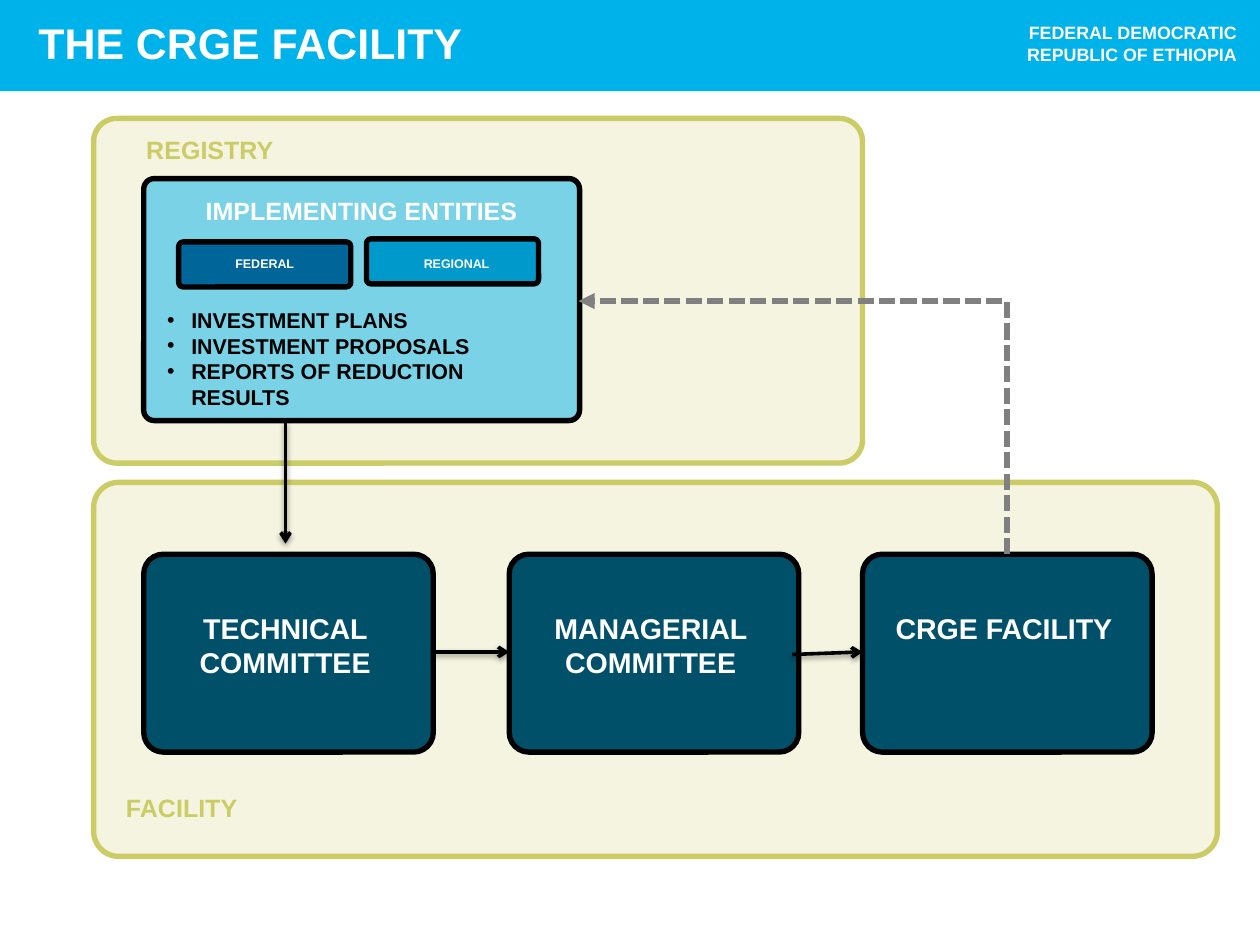
import pptx
import pptx.util
import pptx.dml.color
import pptx.enum.shapes
import pptx.enum.text
import pptx.enum.dml
import pptx.oxml
import pptx.oxml.ns

Cm, Pt = pptx.util.Cm, pptx.util.Pt
SHAPE = pptx.enum.shapes.MSO_SHAPE
CONNECTOR = pptx.enum.shapes.MSO_CONNECTOR
ALIGN = pptx.enum.text.PP_ALIGN
ANCHOR = pptx.enum.text.MSO_ANCHOR

# Content: all places and sizes in centimetres
SKY, OLIVE, NAVY, WHITE, BLACK, GREY = "00B2EA", "CCCC66", "00506A", "FFFFFF", "000000", "808080"
TITLE = "THE CRGE FACILITY"
COUNTRY = "FEDERAL DEMOCRATIC\vREPUBLIC OF ETHIOPIA"
# box, label, label place
PANELS = [
    ((1.85, 2.34, 15.19, 6.81), "REGISTRY", (2.64, 2.54)),
    ((1.85, 9.53, 22.2, 7.39), "FACILITY", (2.24, 15.54)),
]
COMMITTEES = [
    (2.84, "TECHNICAL COMMITTEE"),
    (10.06, "MANAGERIAL COMMITTEE"),
    (17.04, "CRGE FACILITY"),
]
ENTITIES_BOX = (2.84, 3.53, 8.61, 4.78)
ENTITIES_TITLE = "IMPLEMENTING ENTITIES"
# name, colour, box left and top, label left
LEVELS = [
    ("FEDERAL", "006699", 3.53, 4.78, 3.45),
    ("REGIONAL", "0099CC", 7.24, 4.72, 7.24),
]
DOCUMENTS = ["INVESTMENT PLANS", "INVESTMENT PROPOSALS", "REPORTS OF REDUCTION RESULTS"]
FLOW_ARROWS = [
    (8.56, 12.88, 10.06, 12.88),
    (15.65, 12.93, 17.04, 12.88),
    (5.64, 8.33, 5.64, 10.74),
]

presentation = pptx.Presentation()
presentation.slide_width, presentation.slide_height = Cm(24.89), Cm(18.67)
slide = presentation.slides.add_slide(presentation.slide_layouts[6])


def paint(color_format, color):
    color_format.rgb = pptx.dml.color.RGBColor.from_string(color)


def add_xml(parent, xml):
    """Append one element of the drawing namespace, given as a string."""
    declared = xml.replace(" ", " " + pptx.oxml.ns.nsdecls("a") + " ", 1)
    parent.append(pptx.oxml.parse_xml(declared))


def add_box(box, fill, line=None, corner=None, opacity=100):
    kind = SHAPE.RECTANGLE if corner is None else SHAPE.ROUNDED_RECTANGLE
    shape = slide.shapes.add_shape(kind, *map(Cm, box))
    shape.shadow.inherit = False
    if corner is not None:
        shape.adjustments[0] = corner
    shape.fill.solid()
    paint(shape.fill.fore_color, fill)
    if opacity < 100:
        color = shape.fill._xPr.find(".//" + pptx.oxml.ns.qn("a:srgbClr"))
        add_xml(color, f'<a:alpha val="{opacity * 1000}"/>')
    if line:
        paint(shape.line.color, line)
        shape.line.width = Pt(3)
    else:
        shape.line.fill.background()


def add_text(text, box, size, color=WHITE, align=ALIGN.LEFT, anchor=ANCHOR.TOP,
             margins=True, bullets=False):
    frame = slide.shapes.add_textbox(*map(Cm, box)).text_frame
    frame.word_wrap = True
    frame.vertical_anchor = anchor
    if not margins:
        frame.margin_left = frame.margin_right = frame.margin_top = frame.margin_bottom = 0
    frame.text = text
    for paragraph in frame.paragraphs:
        paragraph.alignment = align
        font = paragraph.font
        for run in paragraph.runs:
            font = run.font
            font.name, font.size, font.bold = "Arial", Pt(size), True
            paint(font.color, color)
        if bullets:
            properties = paragraph._p.get_or_add_pPr()
            properties.set("marL", str(Cm(0.48)))
            properties.set("indent", str(-Cm(0.48)))
            add_xml(properties, '<a:buFont typeface="Arial"/>')
            add_xml(properties, '<a:buChar char="•"/>')


def add_arrow(kind, ends, color, width, head, dash=None, shadow=False):
    connector = slide.shapes.add_connector(kind, *map(Cm, ends))
    paint(connector.line.color, color)
    connector.line.width = Pt(width)
    if dash:
        connector.line.dash_style = dash
    add_xml(connector.line._get_or_add_ln(), f'<a:tailEnd type="{head}"/>')
    effect = ""
    if shadow:
        effect = (f'<a:outerShdw blurRad="{Pt(3.1)}" dist="{Pt(1.6)}" dir="5400000" rotWithShape="0">'
                  f'<a:srgbClr val="{BLACK}"><a:alpha val="38000"/></a:srgbClr></a:outerShdw>')
    add_xml(connector._element.spPr, f"<a:effectLst >{effect}</a:effectLst>")
    return connector


# Header band
add_box((0, 0, 24.89, 1.8), SKY)
add_text(TITLE, (0.76, 0.33, 19.89, 1.02), 24, anchor=ANCHOR.BOTTOM, margins=False)
add_text(COUNTRY, (18.64, 0.43, 5.79, 1.27), 10, align=ALIGN.RIGHT, margins=False)

# Registry and facility panels
for box, label, place in PANELS:
    add_box(box, OLIVE, line=OLIVE, corner=0.067, opacity=20)
    add_text(label, (*place, 6.81, 0.86), 14, color=OLIVE)

# Committees
for left, name in COMMITTEES:
    add_box((left, 10.95, 5.72, 3.91), NAVY, line=BLACK, corner=0.099)
    add_text(name, (left, 11.94, 5.59, 1.63), 16, align=ALIGN.CENTER)

# Implementing entities
add_box(ENTITIES_BOX, SKY, line=BLACK, corner=0.043, opacity=50)
add_text(ENTITIES_TITLE, (2.84, 3.73, 8.61, 0.86), 14, align=ALIGN.CENTER)
for name, color, left, top, label_left in LEVELS:
    add_box((left, top, 3.4, 0.89), color, line=BLACK, corner=0.099)
    add_text(name, (label_left, 4.93, 3.56, 0.56), 7, align=ALIGN.CENTER)
add_text("\n".join(DOCUMENTS), (3.05, 5.94, 6.81, 2.31), 12, color=BLACK, bullets=True)

# Flow arrows
for ends in FLOW_ARROWS:
    add_arrow(CONNECTOR.STRAIGHT, ends, BLACK, 2, "arrow", shadow=True)

# Dashed feedback arrow: one bend, turned by 270 degrees
feedback = add_arrow(CONNECTOR.ELBOW, (13.16, 12.68, 18.16, 4.22), GREY, 3, "triangle",
                     dash=pptx.enum.dml.MSO_LINE.SQUARE_DOT)
feedback._element.spPr.find(pptx.oxml.ns.qn("a:prstGeom")).set("prst", "bentConnector2")
feedback._element.spPr.find(pptx.oxml.ns.qn("a:xfrm")).set("rot", str(270 * 60000))

presentation.save("out.pptx")
